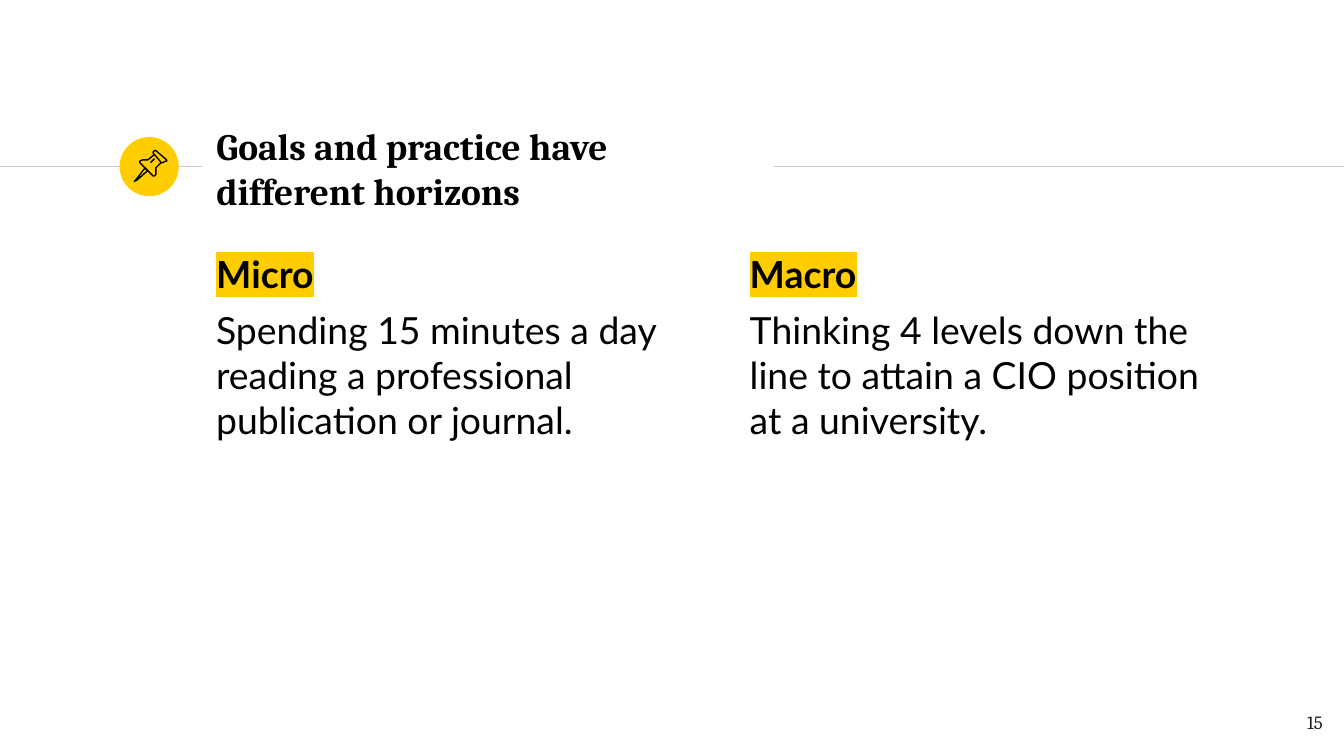
from dataclasses import dataclass

from lxml import etree
from pptx import Presentation
from pptx.dml.color import RGBColor
from pptx.enum.shapes import MSO_CONNECTOR, MSO_SHAPE
from pptx.enum.text import MSO_ANCHOR, MSO_AUTO_SIZE, PP_ALIGN
from pptx.oxml.ns import qn
from pptx.util import Inches, Pt

STRAIGHT = MSO_CONNECTOR.STRAIGHT
OVAL = MSO_SHAPE.OVAL
TOP, MIDDLE = MSO_ANCHOR.TOP, MSO_ANCHOR.MIDDLE
LEFT, RIGHT = PP_ALIGN.LEFT, PP_ALIGN.RIGHT
NO_AUTOFIT = MSO_AUTO_SIZE.NONE

SLIDE_W = 10
SLIDE_H = SLIDE_W * 9 / 16


@dataclass(frozen=True)
class Theme:
    accent: str = "FFCD00"
    rule: str = "CCCCCC"
    text: str = "000000"
    number: str = "1D1D1B"
    heading_font: str = "Cambria"
    body_font: str = "Lato"
    main_size: int = 20
    number_size: int = 10
    line_width: float = 0.75
    space: int = 6
    inset: float = 0.1


THEME = Theme()

# Pushpin outlines in hundredths of an inch: (points, closed)
PIN_PARTS = [
    ([(8, 13), (1, 22), (0, 23), (2, 22), (10, 15)], True),  # needle
    ([(15, 3), (20, 9), (21, 9), (23, 8), (24, 8), (24, 7),
      (16, 0), (15, 0), (14, 1), (14, 2)], True),  # cap
    ([(15, 3), (10, 7), (8, 7), (6, 7), (4, 8), (4, 9), (14, 19), (15, 19),
      (16, 18), (16, 16), (16, 13), (20, 9)], False),  # body
    ([(12, 9), (15, 6)], False),  # highlight
]


def rgb(color):
    return RGBColor.from_string(color)


def setup_frame(tf, anchor=TOP):
    tf.auto_size = NO_AUTOFIT
    tf.word_wrap = True
    tf.vertical_anchor = anchor
    tf.margin_left = tf.margin_right = Inches(THEME.inset)
    tf.margin_top = tf.margin_bottom = Inches(THEME.inset)


def write(p, text, font=THEME.body_font, size=THEME.main_size,
          color=THEME.text, bold=False, align=LEFT, before=0, highlight=None):
    p.alignment = align
    p.space_before = Pt(before)
    r = p.add_run()
    r.text = text
    r.font.name, r.font.size, r.font.bold = font, Pt(size), bold
    r.font.color.rgb = rgb(color)
    if highlight:
        # The highlight follows the fill in the run properties
        mark = etree.Element(qn("a:highlight"))
        etree.SubElement(mark, qn("a:srgbClr"), val=highlight)
        r._r.rPr.find(qn("a:solidFill")).addnext(mark)


def add_text_box(s, x, y, w, h):
    tf = s.shapes.add_textbox(Inches(x), Inches(y), Inches(w), Inches(h)).text_frame
    setup_frame(tf)
    return tf


def add_rule(s, x1, x2, y):
    line = s.shapes.add_connector(STRAIGHT, Inches(x1), Inches(y), Inches(x2), Inches(y))
    line.line.color.rgb = rgb(THEME.rule)
    line.line.width = Pt(THEME.line_width)
    etree.SubElement(line._element.spPr, qn("a:effectLst"))


def add_pin_badge(s, x, y, size):
    badge = s.shapes.add_shape(OVAL, Inches(x), Inches(y), Inches(size), Inches(size))
    badge.shadow.inherit = False
    badge.fill.solid()
    badge.fill.fore_color.rgb = rgb(THEME.accent)
    badge.line.fill.background()
    for points, closed in PIN_PARTS:
        builder = s.shapes.build_freeform(*points[0], scale=Inches(0.01))
        builder.add_line_segments(points[1:], close=closed)
        part = builder.convert_to_shape(Inches(x + 0.11), Inches(y + 0.1))
        part.shadow.inherit = False
        part.fill.background()
        part.line.color.rgb = rgb(THEME.text)
        part.line.width = Pt(THEME.line_width)


def add_header(s, text, x, y, w, h):
    # Rules on both sides of the title, level with its middle
    middle = y + h / 2 - 0.01
    add_rule(s, 0, x - 0.01, middle)
    add_rule(s, x + w + 0.01, SLIDE_W, middle)
    add_pin_badge(s, x - 0.62, middle - 0.22, 0.44)
    # Title
    title = s.shapes.title
    title.left, title.top = Inches(x), Inches(y)
    title.width, title.height = Inches(w), Inches(h)
    setup_frame(title.text_frame, MIDDLE)
    write(title.text_frame.paragraphs[0], text, font=THEME.heading_font, bold=True)


def add_column(s, heading, body, x, y, w, h):
    tf = add_text_box(s, x, y, w, h)
    write(tf.paragraphs[0], heading, bold=True, highlight=THEME.accent)
    write(tf.add_paragraph(), body, before=THEME.space)


def add_page_number(s, number, x, y, w, h):
    tf = add_text_box(s, x, y, w, h)
    write(tf.paragraphs[0], number, font=THEME.heading_font,
          size=THEME.number_size, color=THEME.number, align=RIGHT)


def main():
    prs = Presentation()
    prs.slide_width, prs.slide_height = Inches(SLIDE_W), Inches(SLIDE_H)
    s = prs.slides.add_slide(prs.slide_layouts[5])

    add_header(s, "Goals and practice have different horizons", 1.51, 1.01, 4.24, 0.48)

    # Two equal columns
    columns = [
        ("Micro", "Spending 15 minutes a day reading a professional publication or journal."),
        ("Macro", "Thinking 4 levels down the line to attain a CIO position at a university."),
    ]
    for i, (heading, body) in enumerate(columns):
        add_column(s, heading, body, 1.51 + i * 3.97, 1.77, 3.75, 3.53)

    add_page_number(s, "15", 9.34, 5.19, 0.6, 0.43)
    prs.save("out.pptx")


if __name__ == "__main__":
    main()
